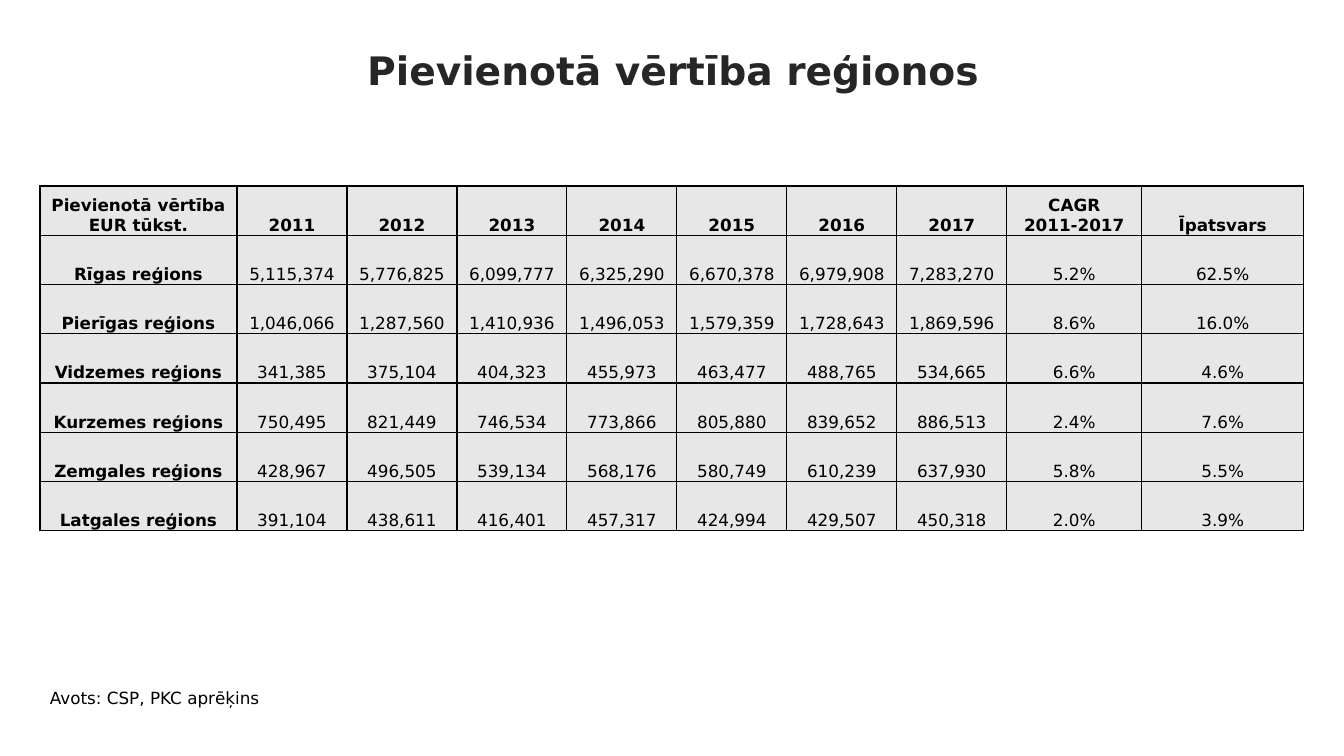
from lxml.etree import SubElement
from pptx import Presentation
from pptx.dml.color import RGBColor
from pptx.enum.text import MSO_ANCHOR as Anchor, MSO_AUTO_SIZE as AutoSize, PP_ALIGN as Align
from pptx.oxml.ns import qn
from pptx.util import Pt

EMU_PER_PX = 914400 / 100.8
COLORS = {"title": "262626", "text": "000000", "cell": "E7E7E7", "border": "000000"}
COLUMN_WIDTHS = [197] + [110] * 7 + [135, 162]
REGIONS = [
    ["Pievienotā vērtība EUR tūkst.", *map(str, range(2011, 2018)), "CAGR\n2011-2017", "Īpatsvars"],
    ["Rīgas reģions", "5,115,374", "5,776,825", "6,099,777", "6,325,290",
     "6,670,378", "6,979,908", "7,283,270", "5.2%", "62.5%"],
    ["Pierīgas reģions", "1,046,066", "1,287,560", "1,410,936", "1,496,053",
     "1,579,359", "1,728,643", "1,869,596", "8.6%", "16.0%"],
    ["Vidzemes reģions", "341,385", "375,104", "404,323", "455,973",
     "463,477", "488,765", "534,665", "6.6%", "4.6%"],
    ["Kurzemes reģions", "750,495", "821,449", "746,534", "773,866",
     "805,880", "839,652", "886,513", "2.4%", "7.6%"],
    ["Zemgales reģions", "428,967", "496,505", "539,134", "568,176",
     "580,749", "610,239", "637,930", "5.8%", "5.5%"],
    ["Latgales reģions", "391,104", "438,611", "416,401", "457,317",
     "424,994", "429,507", "450,318", "2.0%", "3.9%"],
]


def px(length):
    return round(length * EMU_PER_PX)


def set_all(target, values):
    for name, value in values.items():
        setattr(target, name, value)


class SlideBuilder:
    """Holds the text style and the slide being filled."""

    font = "DejaVu Sans"

    def __init__(self, page):
        self.page = page

    def place(self, box, left, top, width, height):
        set_all(box, {"left": px(left), "top": px(top), "width": px(width), "height": px(height)})

    def fill_text(self, frame, text, size=12, color="text", bold=False, **para_format):
        frame.text = text
        for para in frame.paragraphs:
            set_all(para, para_format)
            for span in para.runs:
                set_all(span.font, {"name": self.font, "size": Pt(size), "bold": bold})
                span.font.color.rgb = RGBColor.from_string(COLORS[color])

    def title(self, text, *area):
        box = self.page.shapes.title
        self.place(box, *area)
        set_all(box.text_frame, {"vertical_anchor": Anchor.MIDDLE, "word_wrap": True,
                                 "auto_size": AutoSize.NONE})
        self.fill_text(box.text_frame, text, 28, "title", True,
                       alignment=Align.CENTER, line_spacing=0.9)

    def note(self, text, *area):
        box = self.page.shapes.add_textbox(*map(px, area))
        set_all(box.text_frame, {"word_wrap": True, "auto_size": AutoSize.SHAPE_TO_FIT_TEXT})
        self.fill_text(box.text_frame, text)

    def border(self, cell):
        properties = cell._tc.get_or_add_tcPr()
        for side in ("lnL", "lnR", "lnT", "lnB"):
            line = SubElement(properties, qn(f"a:{side}"), w=str(Pt(1)))
            fill = SubElement(line, qn("a:solidFill"))
            SubElement(fill, qn("a:srgbClr"), val=COLORS["border"])

    def table(self, rows, widths, left, top, height):
        area = map(px, (left, top, sum(widths), height))
        table = self.page.shapes.add_table(len(rows), len(widths), *area).table
        set_all(table, {"first_row": False, "horz_banding": False})
        for column, width in zip(table.columns, widths):
            column.width = px(width)
        for row_index, row in enumerate(rows):
            for column_index, text in enumerate(row):
                cell = table.cell(row_index, column_index)
                set_all(cell, {"vertical_anchor": Anchor.BOTTOM, "margin_left": px(1),
                               "margin_right": px(1), "margin_top": px(1), "margin_bottom": 0})
                self.border(cell)
                cell.fill.solid()
                cell.fill.fore_color.rgb = RGBColor.from_string(COLORS["cell"])
                is_heading = row_index == 0 or column_index == 0
                self.fill_text(cell.text_frame, text, bold=is_heading, alignment=Align.CENTER)


def main():
    deck = Presentation()
    set_all(deck, {"slide_width": px(1344), "slide_height": px(756)})
    slide = SlideBuilder(deck.slides.add_slide(deck.slide_layouts[5]))
    slide.title("Pievienotā vērtība reģionos", 1, 0, 1344, 146)
    slide.table(REGIONS, COLUMN_WIDTHS, 40, 186, 345)
    slide.note("Avots: CSP, PKC aprēķins", 40, 683, 939, 30)
    deck.save("out.pptx")


if __name__ == "__main__":
    main()
